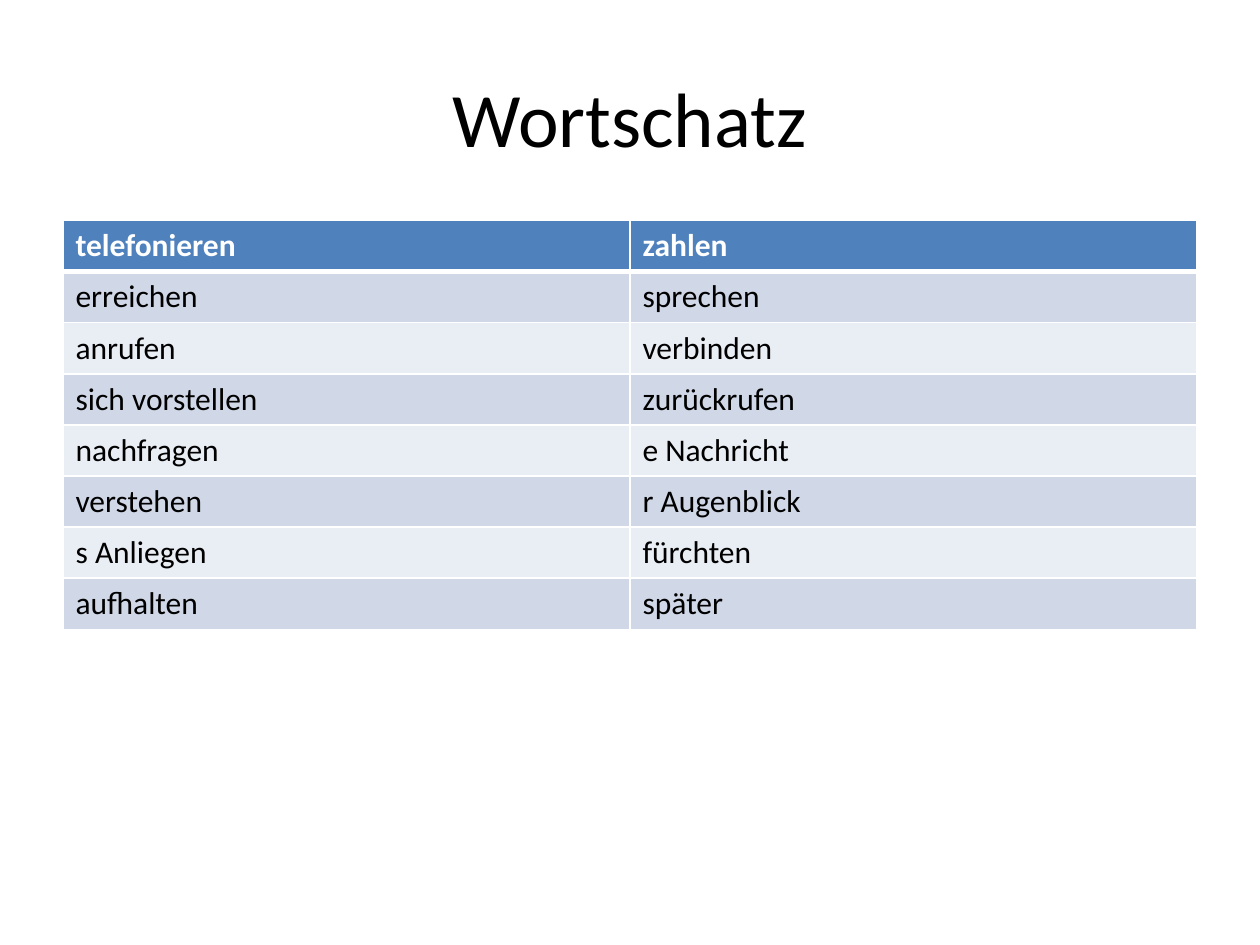
from lxml import etree
from pptx import Presentation
from pptx.dml.color import RGBColor
from pptx.enum.text import MSO_ANCHOR, PP_ALIGN
from pptx.oxml.ns import qn
from pptx.util import Inches, Pt

CENTER = PP_ALIGN.CENTER
MIDDLE = MSO_ANCHOR.MIDDLE
TITLE_ONLY = 5

VOCABULARY = [
    ("telefonieren", "zahlen"),
    ("erreichen", "sprechen"),
    ("anrufen", "verbinden"),
    ("sich vorstellen", "zurückrufen"),
    ("nachfragen", "e Nachricht"),
    ("verstehen", "r Augenblick"),
    ("s Anliegen", "fürchten"),
    ("aufhalten", "später"),
]


def color(value):
    return RGBColor.from_string(value)


class SlideBuilder:
    font = "Calibri"
    black = "000000"
    white = "FFFFFF"
    header_fill = "4F81BD"
    band_fills = ("D0D8E8", "E9EDF4")

    def __init__(self, page):
        self.page = page

    def style(self, paragraph, size, text_color, bold=False):
        font = paragraph.font
        font.name = self.font
        font.size = Pt(size)
        font.bold = bold
        font.color.rgb = color(text_color)

    def title(self, text, left, top, width, height):
        box = self.page.shapes.title
        box.left, box.top = Inches(left), Inches(top)
        box.width, box.height = Inches(width), Inches(height)
        frame = box.text_frame
        frame.text = text
        frame.vertical_anchor = MIDDLE
        paragraph = frame.paragraphs[0]
        paragraph.alignment = CENTER
        self.style(paragraph, 44, self.black)

    def border(self, cell, side, points):
        properties = cell._tc.get_or_add_tcPr()
        line = etree.SubElement(properties, qn(f"a:ln{side}"), w=str(Pt(points)))
        fill = etree.SubElement(line, qn("a:solidFill"))
        etree.SubElement(fill, qn("a:srgbClr"), val=self.white)

    def cell(self, cell, text, row):
        is_header = row == 0
        # Borders come before the fill in the cell properties
        widths = {"L": 1, "R": 1, "T": 3 if row == 1 else 1, "B": 3 if is_header else 1}
        for side, points in widths.items():
            self.border(cell, side, points)
        cell.fill.solid()
        band = self.band_fills[(row - 1) % 2]
        cell.fill.fore_color.rgb = color(self.header_fill if is_header else band)
        cell.text = text
        text_color = self.white if is_header else self.black
        self.style(cell.text_frame.paragraphs[0], 18, text_color, is_header)

    def table(self, rows, left, top, width, height):
        table = self.page.shapes.add_table(
            len(rows), len(rows[0]),
            Inches(left), Inches(top), Inches(width), Inches(height),
        ).table
        for row, words in enumerate(rows):
            for column, word in enumerate(words):
                self.cell(table.cell(row, column), word, row)


def main():
    deck = Presentation()
    deck.slide_width, deck.slide_height = Inches(10), Inches(7.5)
    builder = SlideBuilder(deck.slides.add_slide(deck.slide_layouts[TITLE_ONLY]))

    # Heading
    builder.title("Wortschatz", 0.5, 0.3, 9, 1.25)

    # Vocabulary in two columns
    builder.table(VOCABULARY, 0.5, 1.75, 9, 3.24)

    deck.save("out.pptx")


if __name__ == "__main__":
    main()
